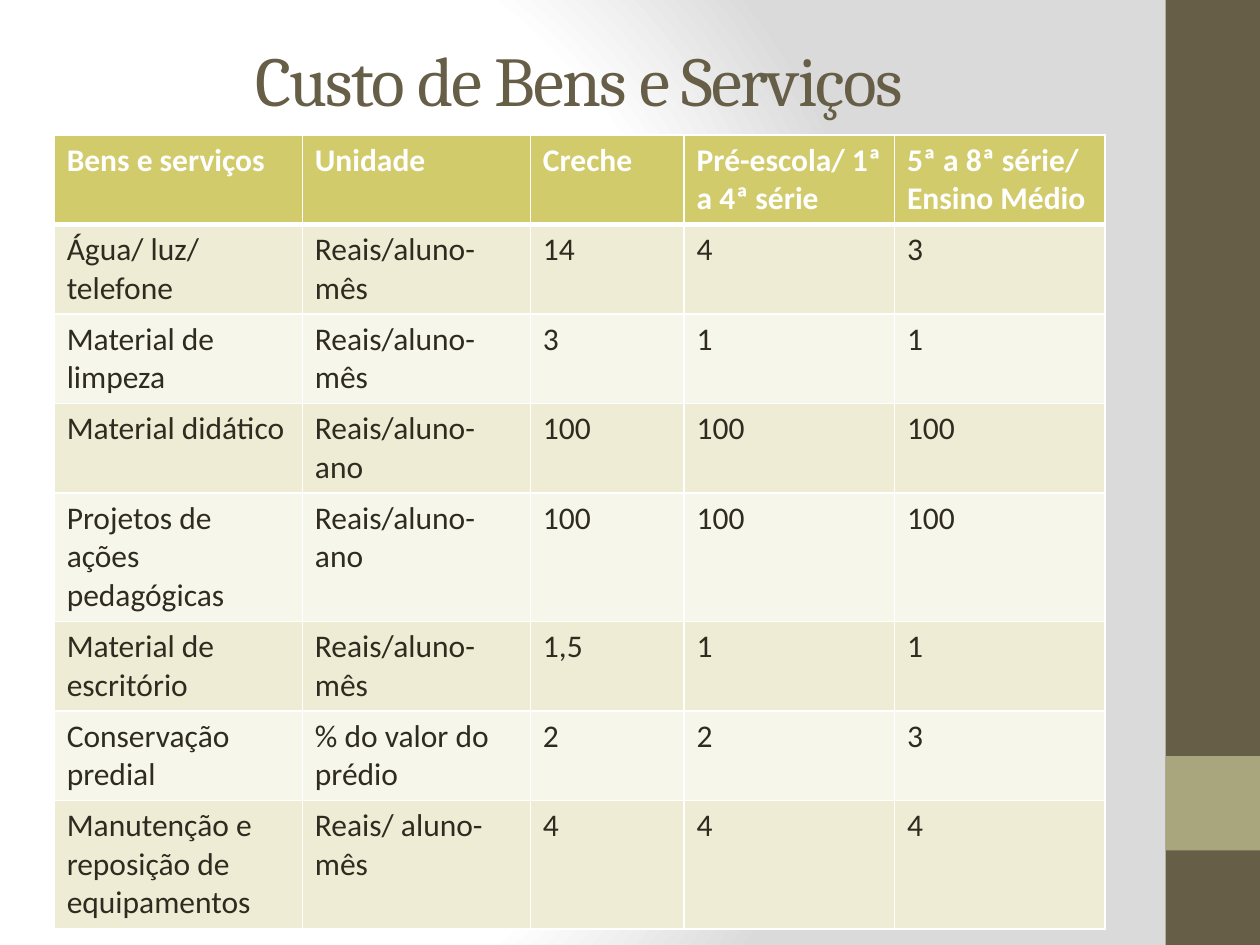
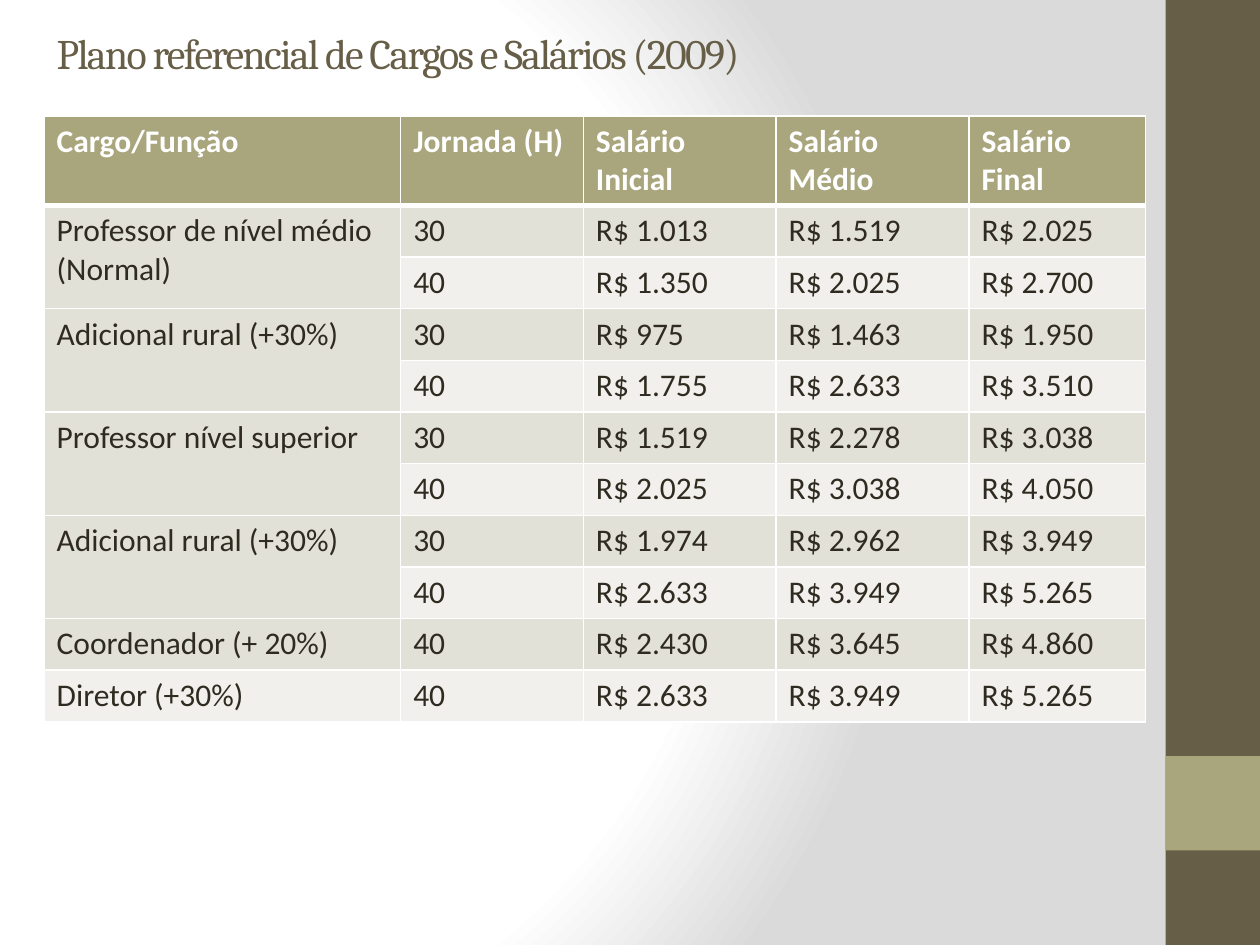
from pptx import Presentation
from pptx.dml.color import RGBColor
from pptx.enum.shapes import MSO_SHAPE
from pptx.enum.text import MSO_ANCHOR, PP_ALIGN
from pptx.oxml import parse_xml
from pptx.oxml.ns import nsdecls, qn
from pptx.util import Inches, Pt

RECT = MSO_SHAPE.RECTANGLE
MIDDLE = MSO_ANCHOR.MIDDLE
LEFT, CENTER = PP_ALIGN.LEFT, PP_ALIGN.CENTER

TITLE_FONT, BODY_FONT = "Cambria", "Calibri"
BROWN, OLIVE, INK, WHITE = "675E47", "A9A57C", "2F2B20", "FFFFFF"
# Header, odd-row and even-row fills
YELLOW_BANDS = ("D2CB6C", "EEECD4", "F7F6EB")
OLIVE_BANDS = (OLIVE, "E2E1D7", "F1F0EC")
BACKGROUND_STOPS = ((0, WHITE), (75, WHITE), (100, "DADADA"))
# Row heights by number of text lines
ROW_HEIGHT = {1: 0.41, 2: 0.71, 3: 1.02}

COSTS = [
    ("Bens e serviços", "Unidade", "Creche", "Pré-escola/ 1ª a 4ª série",
     "5ª a 8ª série/ Ensino Médio"),
    ("Água/ luz/ telefone", "Reais/aluno-mês", "14", "4", "3"),
    ("Material de limpeza", "Reais/aluno-mês", "3", "1", "1"),
    ("Material didático", "Reais/aluno-ano", "100", "100", "100"),
    ("Projetos de ações pedagógicas", "Reais/aluno-ano", "100", "100", "100"),
    ("Material de escritório", "Reais/aluno-mês", "1,5", "1", "1"),
    ("Conservação predial", "% do valor do prédio", "2", "2", "3"),
    ("Manutenção e reposição de equipamentos", "Reais/ aluno-mês", "4", "4", "4"),
]
# None continues the cell above
SALARIES = [
    ("Cargo/Função", "Jornada (H)", "Salário Inicial", "Salário Médio", "Salário Final"),
    ("Professor de nível médio (Normal)", "30", "R$ 1.013", "R$ 1.519", "R$ 2.025"),
    (None, "40", "R$ 1.350", "R$ 2.025", "R$ 2.700"),
    ("Adicional rural (+30%)", "30", "R$ 975", "R$ 1.463", "R$ 1.950"),
    (None, "40", "R$ 1.755", "R$ 2.633", "R$ 3.510"),
    ("Professor nível superior", "30", "R$ 1.519", "R$ 2.278", "R$ 3.038"),
    (None, "40", "R$ 2.025", "R$ 3.038", "R$ 4.050"),
    ("Adicional rural (+30%)", "30", "R$ 1.974", "R$ 2.962", "R$ 3.949"),
    (None, "40", "R$ 2.633", "R$ 3.949", "R$ 5.265"),
    ("Coordenador (+ 20%)", "40", "R$ 2.430", "R$ 3.645", "R$ 4.860"),
    ("Diretor (+30%)", "40", "R$ 2.633", "R$ 3.949", "R$ 5.265"),
]


def rgb(color):
    return RGBColor.from_string(color)


def set_background(master):
    """Give the master a circular gradient, white at left and grey at right."""
    fill = master.background.fill
    fill.gradient()
    grad = master.element.find(".//" + qn("a:gradFill"))
    stops = "".join(f'<a:gs pos="{pos * 1000}"><a:srgbClr val="{color}"/></a:gs>'
                    for pos, color in BACKGROUND_STOPS)
    grad.getparent().replace(grad, parse_xml(
        f'<a:gradFill {nsdecls("a")} rotWithShape="1"><a:gsLst>{stops}</a:gsLst>'
        '<a:path path="circle"><a:fillToRect l="20000" t="50000" r="100000" b="50000"/>'
        '</a:path></a:gradFill>'))


def add_band(s, top, height, color):
    band = s.shapes.add_shape(RECT, Inches(9.25), Inches(top), Inches(0.75), Inches(height))
    band.shadow.inherit = False
    band.fill.solid()
    band.fill.fore_color.rgb = rgb(color)
    band.line.fill.background()


def add_run(p, text, font, size, color, bold=False):
    r = p.add_run()
    r.text = text
    r.font.name = font
    r.font.size = Pt(size)
    r.font.bold = bold
    r.font.color.rgb = rgb(color)
    return r


def add_slide(prs, title, box, size, align):
    """Add a slide with its side bands and a title placed in box."""
    s = prs.slides.add_slide(prs.slide_layouts[5])
    add_band(s, 0, 7.5, BROWN)
    add_band(s, 6, 0.75, OLIVE)
    sp = s.shapes.title
    sp.left, sp.top, sp.width, sp.height = (Inches(v) for v in box)
    tf = sp.text_frame
    tf.word_wrap = True
    tf.vertical_anchor = MIDDLE
    p = tf.paragraphs[0]
    p.alignment = align
    r = add_run(p, title, TITLE_FONT, size, BROWN)
    r.font._element.set("spc", "-100")
    return s


def set_borders(cell, top, bottom):
    tc_pr = cell._tc.get_or_add_tcPr()
    for side, width in (("L", 1), ("R", 1), ("T", top), ("B", bottom)):
        tc_pr.append(parse_xml(
            f'<a:ln{side} {nsdecls("a")} w="{Pt(width)}"><a:solidFill>'
            f'<a:srgbClr val="{WHITE}"/></a:solidFill></a:ln{side}>'))


def format_cell(cell, row, fill):
    set_borders(cell, 3 if row == 1 else 1, 3 if row == 0 else 1)
    cell.fill.solid()
    cell.fill.fore_color.rgb = rgb(fill)


def add_banded_table(s, rows, left, top, widths, line_counts, bands):
    heights = [ROW_HEIGHT[n] for n in line_counts]
    table = s.shapes.add_table(len(rows), len(widths), Inches(left), Inches(top),
                               Inches(sum(widths)), Inches(sum(heights))).table
    for column, width in zip(table.columns, widths):
        column.width = Inches(width)
    for i, (values, height) in enumerate(zip(rows, heights)):
        table.rows[i].height = Inches(height)
        fill = bands[0] if i == 0 else bands[2 - i % 2]
        for j, text in enumerate(values):
            cell = table.cell(i, j)
            format_cell(cell, i, fill)
            if text is None:
                table.cell(i - 1, j).merge(cell)
            else:
                add_run(cell.text_frame.paragraphs[0], text, BODY_FONT, 18,
                        INK if i else WHITE, bold=i == 0)


def main():
    prs = Presentation()
    prs.slide_width, prs.slide_height = Inches(10), Inches(7.5)
    set_background(prs.slide_master)

    s = add_slide(prs, "Custo de Bens e Serviços", (0.43, 0, 8.33, 1.25), 40, CENTER)
    add_banded_table(s, COSTS, 0.43, 1.07, (1.97, 1.81, 1.22, 1.67, 1.67),
                     (2, 2, 2, 2, 3, 2, 2, 3), YELLOW_BANDS)

    s = add_slide(prs, "Plano referencial de Cargos e Salários (2009)",
                  (0.35, 0, 9, 0.84), 24, LEFT)
    add_banded_table(s, SALARIES, 0.35, 0.92, (2.83, 1.45, 1.53, 1.53, 1.4),
                     [2] + [1] * 10, OLIVE_BANDS)
    prs.save("out.pptx")


if __name__ == "__main__":
    main()
